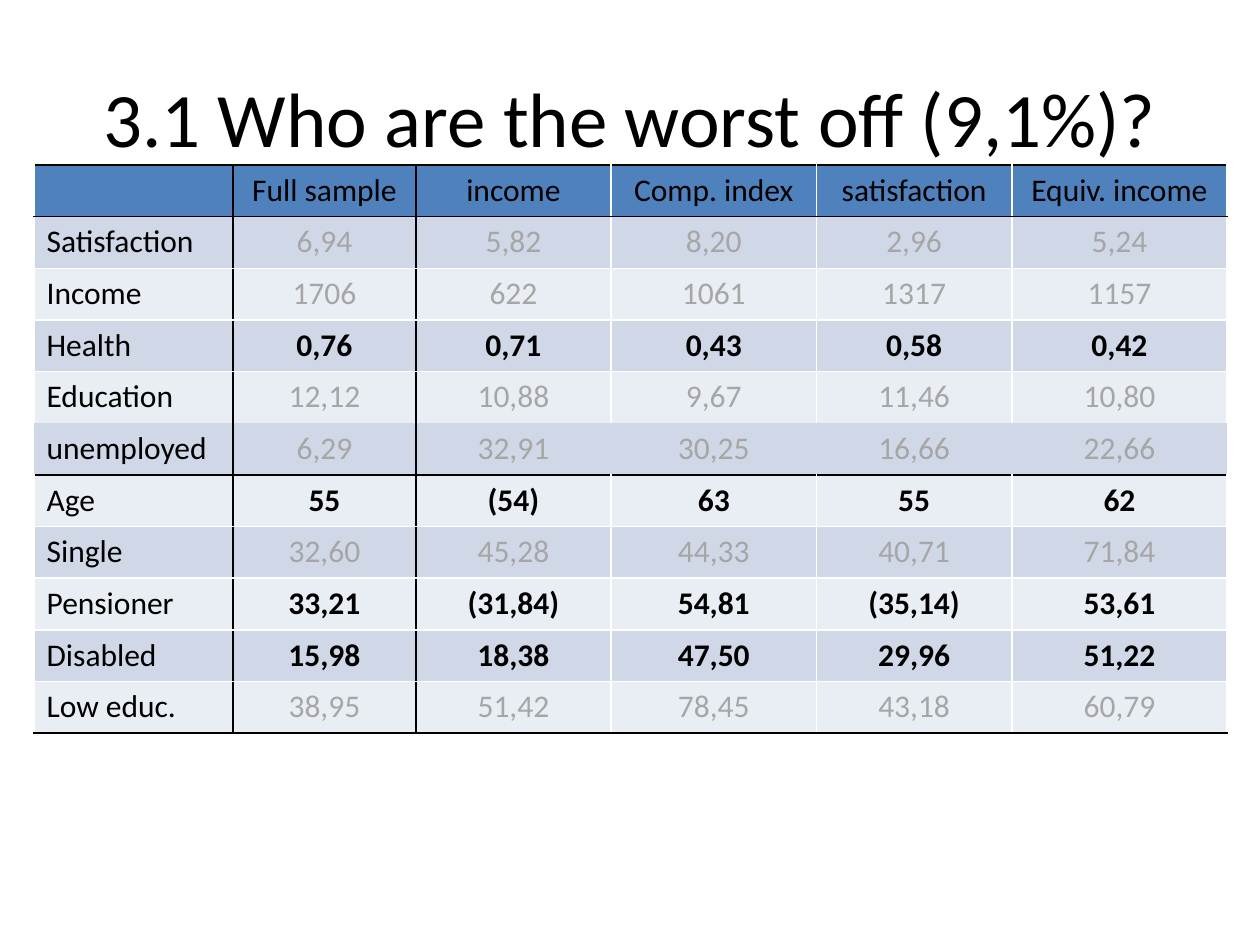
from lxml import etree
from pptx import Presentation
from pptx.dml.color import RGBColor
from pptx.enum.text import MSO_ANCHOR, PP_ALIGN
from pptx.oxml.ns import qn
from pptx.util import Inches, Pt

BLACK = RGBColor(0x00, 0x00, 0x00)
WHITE = RGBColor(0xFF, 0xFF, 0xFF)
GREY = RGBColor(0xA6, 0xA6, 0xA6)
HEADER_BLUE = RGBColor(0x4F, 0x81, 0xBD)
BANDS = [RGBColor(0xE9, 0xED, 0xF4), RGBColor(0xD0, 0xD8, 0xE8)]
FONT = "Calibri"

ROWS = [
    ["", "Full sample", "income", "Comp. index", "satisfaction", "Equiv. income"],
    ["Satisfaction", "6,94", "5,82", "8,20", "2,96", "5,24"],
    ["Income", "1706", "622", "1061", "1317", "1157"],
    ["Health", "0,76", "0,71", "0,43", "0,58", "0,42"],
    ["Education", "12,12", "10,88", "9,67", "11,46", "10,80"],
    ["unemployed", "6,29", "32,91", "30,25", "16,66", "22,66"],
    ["Age", "55", "(54)", "63", "55", "62"],
    ["Single", "32,60", "45,28", "44,33", "40,71", "71,84"],
    ["Pensioner", "33,21", "(31,84)", "54,81", "(35,14)", "53,61"],
    ["Disabled", "15,98", "18,38", "47,50", "29,96", "51,22"],
    ["Low educ.", "38,95", "51,42", "78,45", "43,18", "60,79"],
]
COLUMN_WIDTHS = [1.58, 1.45, 1.55, 1.63, 1.55, 1.71]
ROW_HEIGHT = 0.41
HIGHLIGHTED = {"Health", "Age", "Pensioner", "Disabled"}
UNRULED_ROW = 5
BLACK_RULES_ACROSS = {0, 1, 6, 11}
BLACK_RULES_DOWN = {1, 2}


def style_font(paragraph, size, color, bold=False):
    font = paragraph.font
    font.name = FONT
    font.size = Pt(size)
    font.bold = bold
    font.color.rgb = color


def set_borders(cell, colors):
    """Draw left, right, top and bottom in that order; None leaves a side bare."""
    properties = cell._tc.get_or_add_tcPr()
    for position, (side, color) in enumerate(zip("LRTB", colors)):
        line = etree.Element(qn(f"a:ln{side}"), w=str(Pt(1)))
        if color is None:
            etree.SubElement(line, qn("a:noFill"))
        else:
            fill = etree.SubElement(line, qn("a:solidFill"))
            etree.SubElement(fill, qn("a:srgbClr"), val=str(color))
        properties.insert(position, line)


prs = Presentation()
prs.slide_width, prs.slide_height = Inches(10), Inches(7.5)
slide = prs.slides.add_slide(prs.slide_layouts[6])

title = slide.shapes.add_textbox(
    Inches(0.5), Inches(0.3), Inches(9), Inches(1.25)
).text_frame
title.word_wrap = True
title.vertical_anchor = MSO_ANCHOR.MIDDLE
heading = title.paragraphs[0]
heading.text = "3.1 Who are the worst off (9,1%)?"
heading.alignment = PP_ALIGN.CENTER
style_font(heading, 44, BLACK)

table = slide.shapes.add_table(
    len(ROWS), len(COLUMN_WIDTHS), Inches(0.27), Inches(1.31),
    Inches(sum(COLUMN_WIDTHS)), Inches(ROW_HEIGHT * len(ROWS)),
).table
table.first_row = False
table.horz_banding = False
for column, width in zip(table.columns, COLUMN_WIDTHS):
    column.width = Inches(width)

for r, values in enumerate(ROWS):
    table.rows[r].height = Inches(ROW_HEIGHT)
    highlighted = values[0] in HIGHLIGHTED
    for c, value in enumerate(values):
        cell = table.cell(r, c)
        cell.fill.solid()
        cell.fill.fore_color.rgb = BANDS[r % 2] if r else HEADER_BLUE

        entry = cell.text_frame.paragraphs[0]
        entry.text = value
        is_figure = r > 0 and c > 0
        entry.alignment = PP_ALIGN.LEFT if c == 0 else PP_ALIGN.CENTER
        color = GREY if is_figure and not highlighted else BLACK
        style_font(entry, 18, color, bold=is_figure and highlighted)

        plain_rule = None if r == UNRULED_ROW else WHITE
        down = [BLACK if edge in BLACK_RULES_DOWN else plain_rule
                for edge in (c, c + 1)]
        across = [BLACK if edge in BLACK_RULES_ACROSS
                  else None if edge == UNRULED_ROW else WHITE
                  for edge in (r, r + 1)]
        set_borders(cell, down + across)

prs.save("out.pptx")
